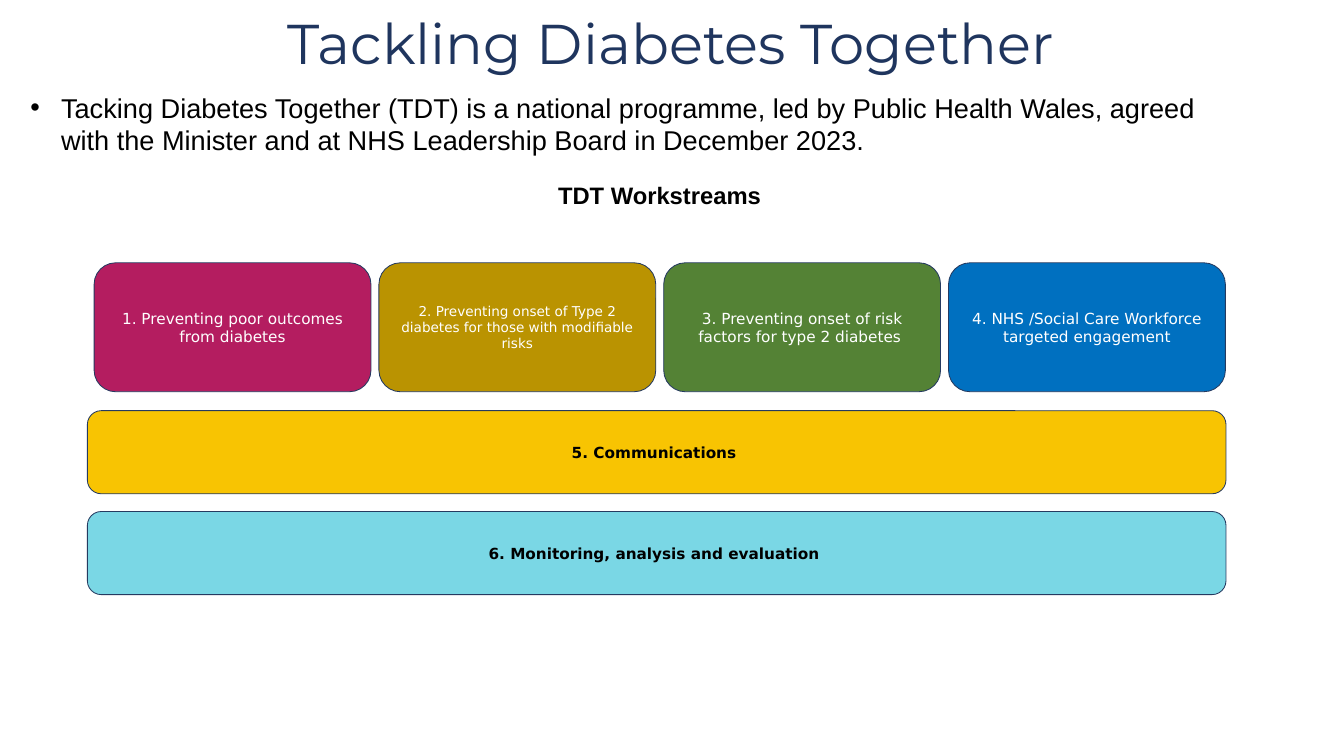
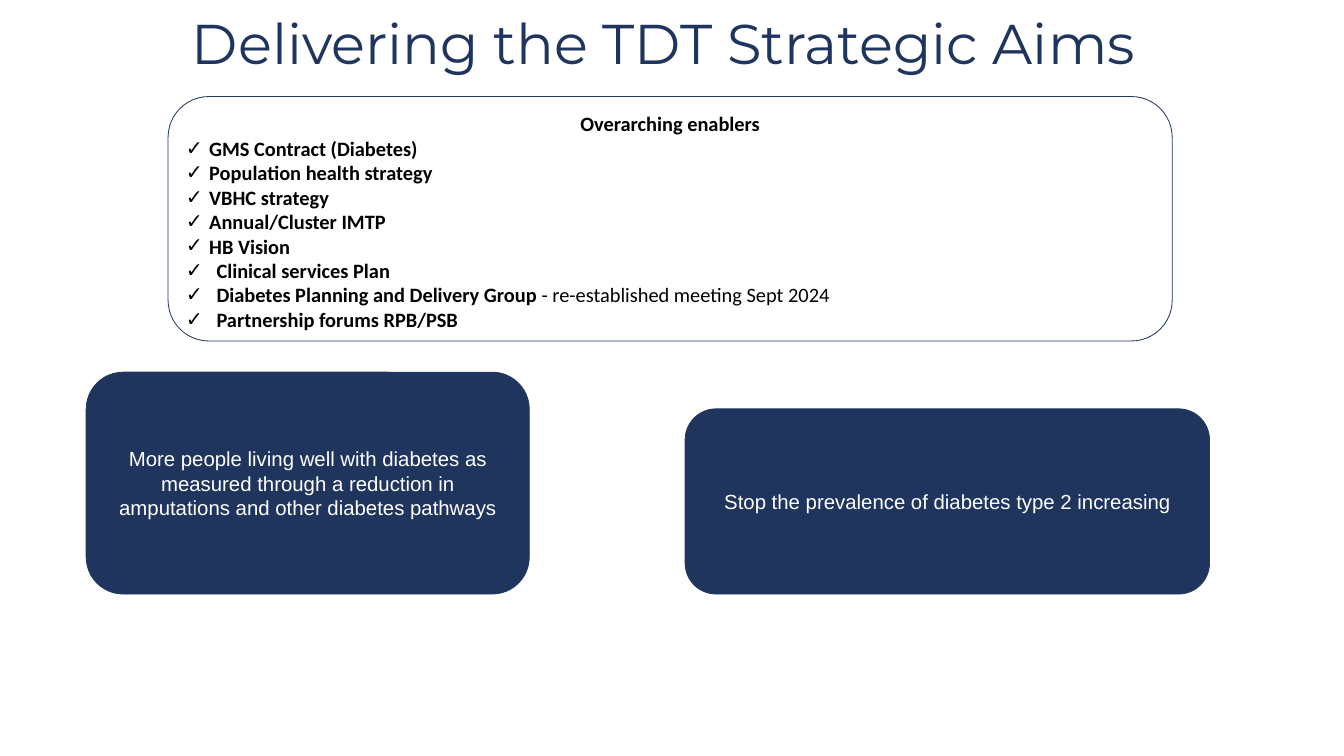
from dataclasses import dataclass

from lxml import etree
from pptx import Presentation
from pptx.dml.color import RGBColor
from pptx.enum.shapes import MSO_SHAPE
from pptx.enum.text import MSO_ANCHOR, MSO_AUTO_SIZE, PP_ALIGN
from pptx.oxml.ns import qn
from pptx.util import Inches, Pt

ROUND = MSO_SHAPE.ROUNDED_RECTANGLE
TOP, MIDDLE = MSO_ANCHOR.TOP, MSO_ANCHOR.MIDDLE
LEFT, CENTER = PP_ALIGN.LEFT, PP_ALIGN.CENTER
FIXED = MSO_AUTO_SIZE.NONE


@dataclass(frozen=True)
class Theme:
    navy: str = "1F355E"
    edge: str = "253A60"
    white: str = "FFFFFF"
    black: str = "000000"
    pink: str = "B41D60"
    ochre: str = "BA9301"
    green: str = "548235"
    blue: str = "0070C0"
    yellow: str = "F8C402"
    aqua: str = "7AD7E5"
    head: str = "Montserrat"
    body: str = "Arial"
    card: str = "DejaVu Sans"
    list: str = "Calibri"
    title: int = 66
    intro: int = 32
    label: int = 28
    aim: int = 24
    stream: int = 18
    small: int = 16


T = Theme()


def write(frame, text, size=T.aim, color=T.black, face=T.body, bold=False,
          align=CENTER, mark=None, indent=0, tail=""):
    first = frame.paragraphs[0]
    para = frame.add_paragraph() if first.runs else first
    para.alignment = align
    if mark:
        props = para._p.get_or_add_pPr()
        props.set("marL", str(Inches(indent)))
        props.set("indent", str(Inches(-indent)))
        etree.SubElement(props, qn("a:buFont")).set("typeface", T.body)
        etree.SubElement(props, qn("a:buChar")).set("char", mark)
    for part, heavy in ((text, bold), (tail, False)):
        if part:
            run = para.add_run()
            run.text = part
            font = run.font
            font.name, font.size, font.bold = face, Pt(size), heavy
            font.color.rgb = RGBColor.from_string(color)
    return para


def add_slide(deck, title):
    slide = deck.slides.add_slide(deck.slide_layouts[5])
    place = slide.shapes.title
    place.left, place.top = Inches(0.39), Inches(0.24)
    place.width, place.height = Inches(21.17), Inches(1.03)
    frame = place.text_frame
    frame.auto_size, frame.word_wrap = FIXED, True
    frame.vertical_anchor = MIDDLE
    para = write(frame, title, size=T.title, color=T.navy, face=T.head)
    para.line_spacing = 0.9
    return slide


def add_text(slide, box, text, **form):
    shape = slide.shapes.add_textbox(*map(Inches, box))
    shape.text_frame.word_wrap = True
    write(shape.text_frame, text, **form)


def add_card(slide, box, fill, anchor=MIDDLE):
    shape = slide.shapes.add_shape(ROUND, *map(Inches, box))
    shape.shadow.inherit = False
    shape.fill.solid()
    shape.fill.fore_color.rgb = RGBColor.from_string(fill)
    shape.line.color.rgb = RGBColor.from_string(T.edge)
    shape.line.width = Pt(1)
    frame = shape.text_frame
    frame.word_wrap = True
    frame.vertical_anchor = anchor
    return frame


def add_streams(deck):
    slide = add_slide(deck, "Tackling Diabetes\u00a0Together".replace("\u00a0", " "))
    add_text(slide, (0.4, 1.44, 19.92, 1.18),
             "Tacking Diabetes Together (TDT) is a national programme, led by "
             "Public Health Wales, agreed with the Minister and at NHS "
             "Leadership Board in December 2023.",
             size=T.intro, align=LEFT, mark="•", indent=0.5)
    add_text(slide, (1.48, 2.9, 18.62, 0.98), "TDT Workstreams",
             size=T.label, bold=True)
    cards = (
        ("1. Preventing poor outcomes from diabetes", T.pink, T.stream),
        ("2. Preventing onset of Type 2 diabetes for those with modifiable "
         "risks", T.ochre, T.small),
        ("3. Preventing onset of risk factors for type 2 diabetes ",
         T.green, T.stream),
        ("4. NHS /Social Care Workforce targeted engagement",
         T.blue, T.stream),
    )
    for col, (text, fill, size) in enumerate(cards):
        frame = add_card(slide, (1.54 + 4.66 * col, 4.3, 4.53, 2.11), fill)
        write(frame, text, size=size, color=T.white, face=T.card)
    bars = (("5. Communications ", T.yellow),
            ("6. Monitoring, analysis and evaluation ", T.aqua))
    for row, (text, fill) in enumerate(bars):
        frame = add_card(slide, (1.43, 6.72 + 1.65 * row, 18.63, 1.36), fill)
        write(frame, text, size=T.stream, face=T.card, bold=True)


def add_aims(deck):
    slide = add_slide(deck, "Delivering the TDT Strategic Aims ")
    frame = add_card(slide, (2.75, 1.58, 16.43, 4), T.white, TOP)
    write(frame, "Overarching enablers", face=T.list, bold=True)
    items = (
        ("GMS Contract (Diabetes)", 0.38, ""),
        ("Population health strategy", 0.38, ""),
        ("VBHC strategy", 0.38, ""),
        ("Annual/Cluster IMTP", 0.38, ""),
        ("HB Vision", 0.38, ""),
        ("Clinical services Plan", 0.5, ""),
        ("Diabetes Planning and Delivery Group ", 0.5,
         "- re-established meeting Sept 2024"),
        ("Partnership forums RPB/PSB", 0.5, ""),
    )
    for text, indent, tail in items:
        write(frame, text, face=T.list, bold=True, align=LEFT,
              mark="✓", indent=indent, tail=tail)
    aims = (
        ((1.41, 6.09, 7.25, 3.63),
         "More people living well with diabetes as measured through a "
         "reduction in amputations and other diabetes pathways"),
        ((11.21, 6.69, 8.58, 3.03),
         "Stop the prevalence of diabetes type 2 increasing"),
    )
    for box, text in aims:
        write(add_card(slide, box, T.navy), text, color=T.white)


def main():
    deck = Presentation()
    deck.slide_width, deck.slide_height = Inches(21.99), Inches(12.37)
    add_streams(deck)
    add_aims(deck)
    deck.save("out.pptx")


if __name__ == "__main__":
    main()
